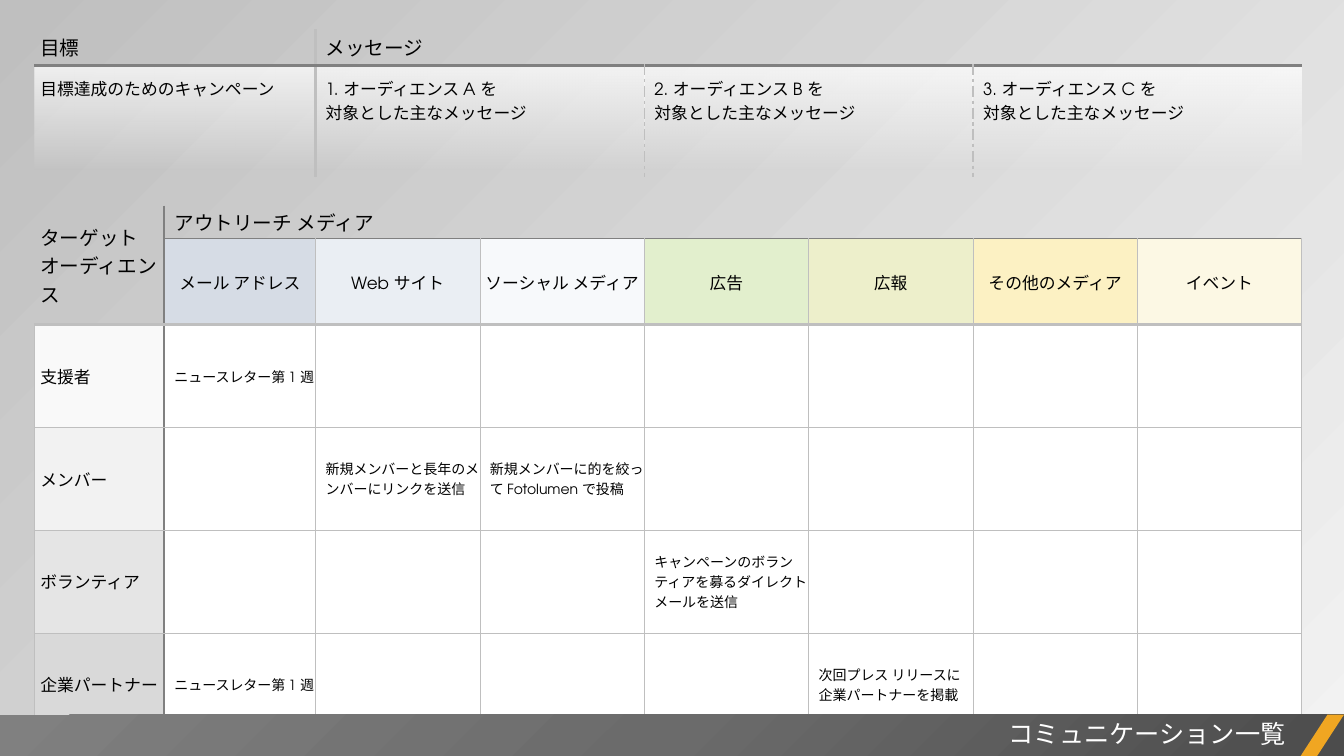
from lxml.etree import SubElement
from pptx import Presentation
from pptx.dml.color import RGBColor
from pptx.enum.shapes import MSO_SHAPE
from pptx.enum.text import MSO_ANCHOR, MSO_AUTO_SIZE, PP_ALIGN
from pptx.oxml.ns import qn
from pptx.util import Inches, Pt

FONT = "TeX Gyre Adventor"
NO_STYLE_NO_GRID = "{2D5ABB26-0587-4C30-8999-92F81FD0307C}"

BLACK = RGBColor(0x00, 0x00, 0x00)
WHITE = RGBColor(0xFF, 0xFF, 0xFF)
PALE_GRAY = RGBColor(0xF2, 0xF2, 0xF2)
LIGHT_GRAY = RGBColor(0xBF, 0xBF, 0xBF)
MID_GRAY = RGBColor(0x80, 0x80, 0x80)
BAR_MID = RGBColor(0x6B, 0x6B, 0x6B)
BAR_DARK = RGBColor(0x4C, 0x4C, 0x4C)
ORANGE = RGBColor(0xF0, 0xA6, 0x22)

MEDIA = [
    ("メール アドレス", RGBColor(0xD6, 0xDC, 0xE5)),
    ("Web サイト", RGBColor(0xEA, 0xEE, 0xF3)),
    ("ソーシャル メディア", RGBColor(0xF7, 0xF9, 0xFB)),
    ("広告", RGBColor(0xE2, 0xEF, 0xCD)),
    ("広報", RGBColor(0xED, 0xEF, 0xCB)),
    ("その他のメディア", RGBColor(0xFC, 0xF1, 0xC3)),
    ("イベント", RGBColor(0xFC, 0xF8, 0xE4)),
]
# Audience, label colour, and notes keyed by table column
AUDIENCES = [
    ("支援者", RGBColor(0xF9, 0xF9, 0xF9), {1: "ニュースレター第 1 週"}),
    ("メンバー", PALE_GRAY, {2: "新規メンバーと長年のメンバーにリンクを送信",
                         3: "新規メンバーに的を絞って Fotolumen で投稿"}),
    ("ボランティア", RGBColor(0xE5, 0xE5, 0xE5),
     {4: "キャンペーンのボランティアを募るダイレクト メールを送信"}),
    ("企業パートナー", RGBColor(0xD9, 0xD9, 0xD9),
     {1: "ニュースレター第 1 週", 5: "次回プレス リリースに\n企業パートナーを掲載"}),
]

THIN = (LIGHT_GRAY, 0.5, "solid")
THICK = (LIGHT_GRAY, 2.25, "solid")
DASHED = (LIGHT_GRAY, 1, "sysDashDot")


def set_gradient(owner, stops, angle=None):
    """Replace the owner's noFill; stops are (position, colour, opacity).

    Without an angle the gradient is circular, centred at the bottom right.
    """
    empty_fill = owner.find(qn("a:noFill"))
    gradient = owner.makeelement(qn("a:gradFill"), {"rotWithShape": "1"})
    owner.replace(empty_fill, gradient)
    stop_list = SubElement(gradient, qn("a:gsLst"))
    for position, color, opacity in stops:
        stop = SubElement(stop_list, qn("a:gs"), pos=str(position * 1000))
        rgb = SubElement(stop, qn("a:srgbClr"), val=str(color))
        if opacity < 100:
            SubElement(rgb, qn("a:alpha"), val=str(opacity * 1000))
    if angle is None:
        circle = SubElement(gradient, qn("a:path"), path="circle")
        SubElement(circle, qn("a:fillToRect"), l="100000", t="100000")
    else:
        SubElement(gradient, qn("a:lin"), ang=str(angle * 60000), scaled="0")


def set_borders(cell, borders):
    """Draw borders given in the order left, right, top, bottom."""
    properties = cell._tc.get_or_add_tcPr()
    for tag, border in zip(("a:lnL", "a:lnR", "a:lnT", "a:lnB"), borders):
        if border:
            color, width, dash = border
            line = SubElement(properties, qn(tag), w=str(Pt(width)))
            fill = SubElement(line, qn("a:solidFill"))
            SubElement(fill, qn("a:srgbClr"), val=str(color))
            SubElement(line, qn("a:prstDash"), val=dash)


def add_plain_table(slide, left, top, widths, heights, vertical, horizontal):
    """Add an unstyled table; vertical(row, x) and horizontal(y, column) give its lines."""
    frame = slide.shapes.add_table(len(heights), len(widths), Inches(left), Inches(top),
                                   Inches(sum(widths)), Inches(sum(heights)))
    table = frame.table
    table.first_row = table.horz_banding = False
    next(frame.element.iter(qn("a:tableStyleId"))).text = NO_STYLE_NO_GRID
    for column, width in zip(table.columns, widths):
        column.width = Inches(width)
    for row, height in zip(table.rows, heights):
        row.height = Inches(height)
    for r in range(len(heights)):
        for c in range(len(widths)):
            cell = table.cell(r, c)
            cell.margin_left = cell.margin_right = cell.margin_top = cell.margin_bottom = 0
            set_borders(cell, (vertical(r, c), vertical(r, c + 1),
                               horizontal(r, c), horizontal(r + 1, c)))
            cell.fill.background()
    return table


def write_text(frame, text, size, color=BLACK, alignment=PP_ALIGN.LEFT):
    frame.text = text.replace("\n", "\v")
    paragraph = frame.paragraphs[0]
    paragraph.alignment = alignment
    for run in paragraph.runs:
        for name, value in {"name": FONT, "size": Pt(size), "bold": False}.items():
            setattr(run.font, name, value)
        run.font.color.rgb = color


def write_cell(cell, text, size, indent=0.1, alignment=PP_ALIGN.LEFT):
    write_text(cell.text_frame, text, size, alignment=alignment)
    cell.margin_left = Inches(indent)
    cell.vertical_anchor = MSO_ANCHOR.MIDDLE


def fill_cell(cell, color):
    cell.fill.solid()
    cell.fill.fore_color.rgb = color


def outreach_vertical(row, x):
    if x == 1:
        return MID_GRAY, 1.5, "solid"
    return THIN if row >= (2 if x == 0 else 1) else None


def outreach_horizontal(y, column):
    if y < 2:
        return (MID_GRAY, 1, "solid") if y == 1 and column else None
    return THICK if y == 2 else THIN


def add_outreach_table(slide, left, top):
    table = add_plain_table(slide, left, top, [1.29, 1.5] + [1.63] * 6,
                            [0.33, 0.34] + [1.02] * len(AUDIENCES),
                            outreach_vertical, outreach_horizontal)
    table.cell(0, 0).merge(table.cell(1, 0))
    table.cell(0, 1).merge(table.cell(0, len(MEDIA)))
    write_cell(table.cell(0, 0), "ターゲット \nオーディエンス", 14, 0.06)
    write_cell(table.cell(0, 1), "アウトリーチ メディア", 14)
    for c, (medium, color) in enumerate(MEDIA, 1):
        write_cell(table.cell(1, c), medium, 12, 0, PP_ALIGN.CENTER)
        fill_cell(table.cell(1, c), color)
    for r, (audience, color, notes) in enumerate(AUDIENCES, 2):
        write_cell(table.cell(r, 0), audience, 12, 0.06)
        fill_cell(table.cell(r, 0), color)
        for c in range(1, len(MEDIA) + 1):
            fill_cell(table.cell(r, c), WHITE)
            if c in notes:
                write_cell(table.cell(r, c), notes[c], 10)


def message_vertical(row, x):
    if x == 1:
        return THICK
    return DASHED if row == 1 and x in (2, 3) else None


def message_horizontal(y, column):
    return (MID_GRAY, 2.25, "solid") if y == 1 else None


def add_message_table(slide, left, top):
    table = add_plain_table(slide, left, top, [2.79] + [3.26] * 3, [0.36, 1.11],
                            message_vertical, message_horizontal)
    table.cell(0, 1).merge(table.cell(0, 3))
    write_cell(table.cell(0, 0), "目標", 14, 0.06)
    write_cell(table.cell(0, 1), "メッセージ", 14)
    texts = ["目標達成のためのキャンペーン"]
    texts += [f"{number}. オーディエンス {audience} を\n対象とした主なメッセージ"
              for number, audience in enumerate("ABC", 1)]
    for c, text in enumerate(texts):
        cell = table.cell(1, c)
        write_cell(cell, text, 12, 0.1 if c else 0.06)
        cell.vertical_anchor = MSO_ANCHOR.TOP
        cell.margin_top = Inches(0.1)
        set_gradient(cell._tc.tcPr, [(0, WHITE, 75), (93, WHITE, 0)], 90)


def add_title_bar(slide, left, top, width, height):
    accent_width = 0.43
    bar = slide.shapes.add_shape(MSO_SHAPE.RECTANGLE, Inches(left), Inches(top),
                                 Inches(width), Inches(height))
    accent = slide.shapes.add_shape(MSO_SHAPE.PARALLELOGRAM,
                                    Inches(left + width - accent_width), Inches(top),
                                    Inches(accent_width), Inches(height))
    for shape in (bar, accent):
        shape.shadow.inherit = False
        shape.line.fill.background()
    bar.fill.background()
    set_gradient(bar.element.spPr, [(0, BAR_DARK, 100), (50, BAR_MID, 100), (100, MID_GRAY, 100)])
    accent.adjustments[0] = 0.65
    accent.fill.solid()
    accent.fill.fore_color.rgb = ORANGE

    title = slide.shapes.title
    title.element.getparent().append(title.element)
    box = {"left": left + 5.25, "top": top - 0.01, "width": 7.6, "height": 0.4}
    for name, value in box.items():
        setattr(title, name, Inches(value))
    write_text(title.text_frame, "コミュニケーション一覧", 18, WHITE, PP_ALIGN.RIGHT)
    title.text_frame.auto_size = MSO_AUTO_SIZE.NONE
    title.text_frame.vertical_anchor = MSO_ANCHOR.MIDDLE


def main():
    presentation = Presentation()
    presentation.slide_width, presentation.slide_height = Inches(13.33), Inches(7.5)
    slide = presentation.slides.add_slide(presentation.slide_layouts[5])
    slide.background.fill.background()
    set_gradient(next(slide.element.iter(qn("p:bgPr"))),
                 [(0, PALE_GRAY, 40), (100, LIGHT_GRAY, 100)], 225)
    add_outreach_table(slide, 0.34, 2.04)
    add_title_bar(slide, 0, 7.09, 13.33, 0.41)
    add_message_table(slide, 0.34, 0.29)
    presentation.save("out.pptx")


if __name__ == "__main__":
    main()
